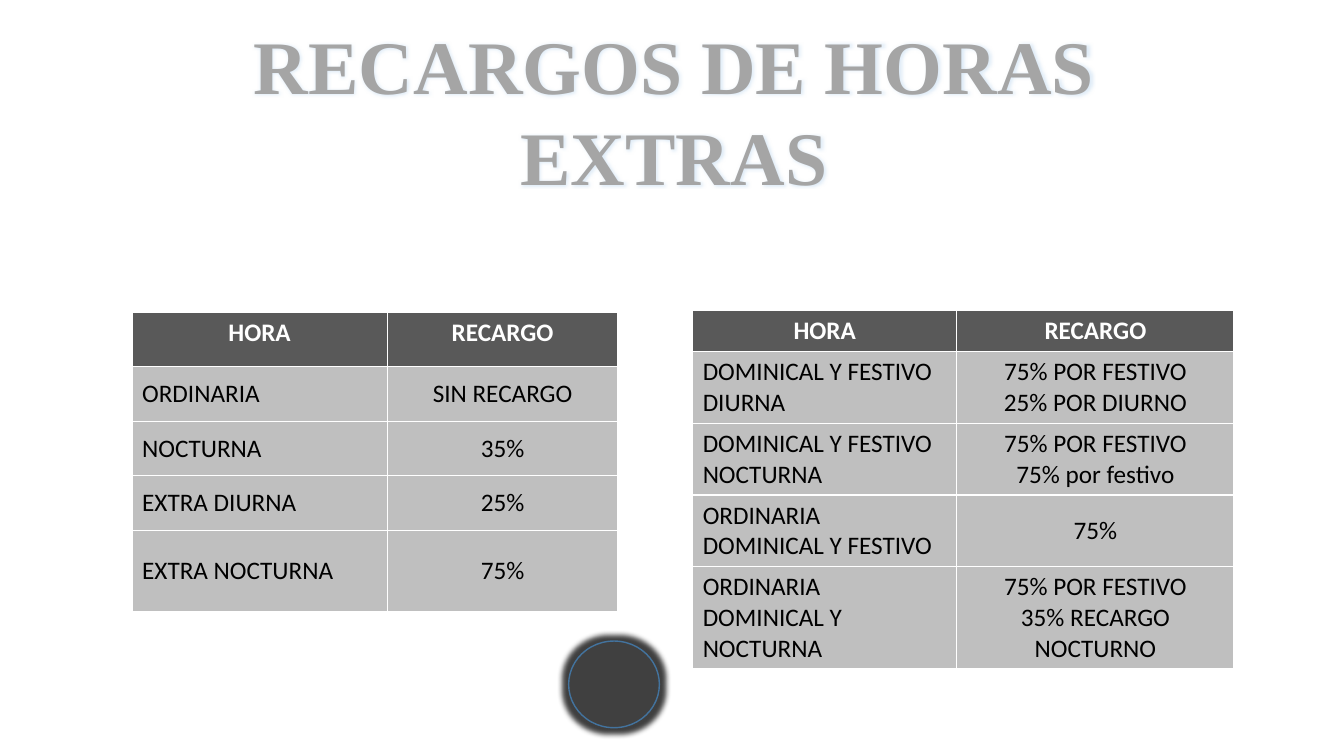
from lxml import etree
from pptx import Presentation
from pptx import util as u
from pptx.dml import color
from pptx.enum import shapes, text
from pptx.oxml import ns

COLORS = {
    "title": "A5A5A5", "title_glow": "DEEBF7", "header": "595959", "body": "BFBFBF",
    "white": "FFFFFF", "black": "000000", "disc": "404040", "disc_line": "43739E",
}

BASIC_HOURS = [
    ("HORA", "RECARGO"),
    ("ORDINARIA", "SIN RECARGO"),
    ("NOCTURNA", "35%"),
    ("EXTRA DIURNA", "25%"),
    ("EXTRA NOCTURNA", "75%"),
]
HOLIDAY_HOURS = [
    ("HORA", "RECARGO"),
    ("DOMINICAL Y FESTIVO DIURNA", "75% POR FESTIVO\n25% POR DIURNO"),
    ("DOMINICAL Y FESTIVO NOCTURNA", "75% POR FESTIVO\n75% por festivo"),
    ("ORDINARIA DOMINICAL Y FESTIVO", "75%"),
    ("ORDINARIA DOMINICAL Y NOCTURNA", "75% POR FESTIVO\n35% RECARGO NOCTURNO"),
]


def rgb(name):
    """Return the named colour."""
    return color.RGBColor.from_string(COLORS[name])


def glow(name, radius):
    """Return an effect list with a glow of the named colour."""
    effects = etree.Element(ns.qn("a:effectLst"))
    halo = etree.SubElement(effects, ns.qn("a:glow"), rad=str(radius))
    etree.SubElement(halo, ns.qn("a:srgbClr"), val=COLORS[name])
    return effects


def style_run(run, face, size, name, bold):
    """Set the font of a run."""
    run.font.name, run.font.size, run.font.bold = face, u.Pt(size), bold
    run.font.color.rgb = rgb(name)


def add_heading(slide, left, top, width, height):
    """Place the slide title in its box."""
    heading = slide.shapes.title
    heading.left, heading.top = u.Inches(left), u.Inches(top)
    heading.width, heading.height = u.Inches(width), u.Inches(height)
    frame = heading.text_frame
    frame.text = "RECARGOS DE HORAS EXTRAS"
    frame.word_wrap = True
    frame.auto_size = text.MSO_AUTO_SIZE.NONE
    frame.vertical_anchor = text.MSO_ANCHOR.TOP
    line = frame.paragraphs[0]
    line.alignment = text.PP_ALIGN.CENTER
    line.line_spacing = 1.0
    run = line.runs[0]
    style_run(run, "Times New Roman", 54, "title", True)
    run.font.fill._xPr.find(ns.qn("a:solidFill")).addnext(glow("title_glow", u.Pt(4)))


def add_surcharges(slide, rows, left, top, widths, heights):
    """Place a table of hours and surcharges from its top left corner."""
    surcharges = slide.shapes.add_table(
        len(rows), len(widths), u.Inches(left), u.Inches(top),
        u.Inches(sum(widths)), u.Inches(sum(heights))).table
    for column, width in zip(surcharges.columns, widths):
        column.width = u.Inches(width)
    for r, (entries, height) in enumerate(zip(rows, heights)):
        surcharges.rows[r].height = u.Inches(height)
        header = r == 0
        for c, entry in enumerate(entries):
            cell = surcharges.cell(r, c)
            cell.text_frame.text = entry
            cell.fill.solid()
            cell.fill.fore_color.rgb = rgb("header" if header else "body")
            cell.vertical_anchor = text.MSO_ANCHOR.TOP if header else text.MSO_ANCHOR.MIDDLE
            for line in cell.text_frame.paragraphs:
                centred = header or c == 1
                line.alignment = text.PP_ALIGN.CENTER if centred else text.PP_ALIGN.LEFT
                style_run(line.runs[0], "Calibri", 18, "white" if header else "black", header)


def add_disc(slide, left, top, width, height):
    """Place the glowing dark disc in its box."""
    disc = slide.shapes.add_shape(
        shapes.MSO_SHAPE.OVAL, u.Inches(left), u.Inches(top), u.Inches(width), u.Inches(height))
    disc.fill.solid()
    disc.fill.fore_color.rgb = rgb("disc")
    disc.line.color.rgb = rgb("disc_line")
    disc.line.width = u.Pt(1)
    disc._element.spPr.append(glow("disc", u.Pt(8)))


def main():
    """Build the slide and save it."""
    deck = Presentation()
    deck.slide_width, deck.slide_height = u.Inches(13.33), u.Inches(7.5)
    slide = deck.slides.add_slide(deck.slide_layouts[5])
    add_heading(slide, 1.03, 0.14, 11.31, 1.92)
    add_surcharges(slide, BASIC_HOURS, 1.31, 3.1, [2.53, 2.29], [0.54] * 4 + [0.81])
    add_surcharges(slide, HOLIDAY_HOURS, 6.87, 3.08, [2.62, 2.75], [0.41] + [0.7] * 3 + [1.0])
    add_disc(slide, 5.64, 6.36, 0.9, 0.86)
    deck.save("out.pptx")


if __name__ == "__main__":
    main()
